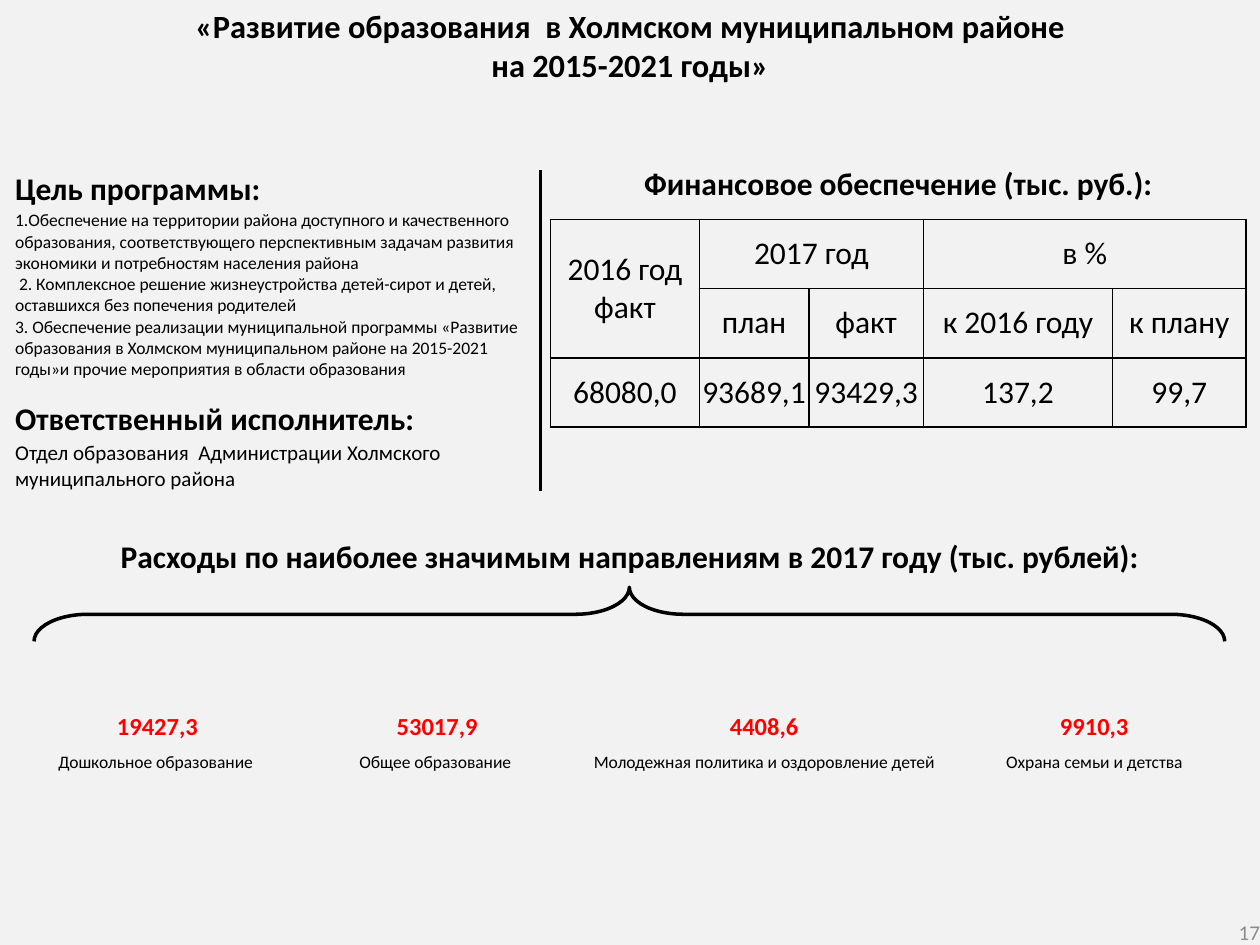
from lxml.etree import SubElement
from pptx import Presentation
from pptx.dml.color import RGBColor
from pptx.enum.shapes import MSO_SHAPE as Shape
from pptx.enum.text import MSO_ANCHOR as Anchor, PP_ALIGN as Align
from pptx.oxml.ns import qn
from pptx.util import Inches, Pt

COLORS = {"background": "F2F2F2", "text": "000000", "amount": "FF0000", "number": "8C8C8C"}
FONT = "Calibri"
PLAIN_TABLE = "{2D5ABB26-0587-4C30-8999-92F81FD0307C}"
SIDES = ("L", "R", "T", "B")


def rgb(name):
    return RGBColor.from_string(COLORS[name])


def write(frame, lines, size, bold=False, color="text", align=Align.CENTER):
    runs = []
    for index, line in enumerate(lines):
        paragraph = frame.paragraphs[0] if index == 0 else frame.add_paragraph()
        paragraph.alignment = align
        run = paragraph.add_run()
        run.text = line
        run.font.name = FONT
        run.font.size = Pt(size)
        run.font.bold = bold
        run.font.color.rgb = rgb(color)
        runs.append(run)
    return runs


def add_text_box(slide, box, anchor=Anchor.MIDDLE):
    shape = slide.shapes.add_textbox(*map(Inches, box))
    frame = shape.text_frame
    frame.word_wrap = True
    frame.vertical_anchor = anchor
    return frame


def add_plain_table(slide, left, top, widths, heights):
    box = map(Inches, (left, top, sum(widths), sum(heights)))
    table = slide.shapes.add_table(len(heights), len(widths), *box).table
    table.first_row = table.horz_banding = False
    table._tbl.tblPr.find(qn("a:tableStyleId")).text = PLAIN_TABLE
    for column, width in zip(table.columns, widths):
        column.width = Inches(width)
    for row, height in zip(table.rows, heights):
        row.height = Inches(height)
    return table


def format_cell(cell, margin, anchor=Anchor.MIDDLE, borders="", weight=1):
    cell.margin_left = cell.margin_right = Inches(margin)
    cell.margin_top = cell.margin_bottom = Inches(margin)
    cell.vertical_anchor = anchor
    properties = cell._tc.get_or_add_tcPr()
    for side in SIDES:
        if side in borders:
            line = SubElement(properties, qn(f"a:ln{side}"), w=str(Pt(weight)))
            fill = SubElement(line, qn("a:solidFill"))
            SubElement(fill, qn("a:srgbClr"), val=COLORS["text"])
        else:
            line = SubElement(properties, qn(f"a:ln{side}"), w="0")
            SubElement(line, qn("a:noFill"))
    cell.fill.background()


def add_title(slide, box):
    frame = add_text_box(slide, box, Anchor.TOP)
    lines = ["«Развитие образования  в Холмском муниципальном районе", "на 2015-2021 годы»"]
    for run in write(frame, lines, 18.5, True):
        properties = run.font._element
        effects = SubElement(properties, qn("a:effectLst"))
        properties.find(qn("a:solidFill")).addnext(effects)
        shadow = SubElement(effects, qn("a:outerShdw"), blurRad=str(Pt(3)),
                            dist=str(Pt(3)), dir="2700000", algn="tl")
        color = SubElement(shadow, qn("a:srgbClr"), val=COLORS["text"])
        SubElement(color, qn("a:alpha"), val="43000")


def add_programme(slide, left, top, width):
    sections = [
        (0.32, 18, True, ["Цель программы:"]),
        (1.51, 10, False, [
            "1.Обеспечение на территории района доступного и качественного образования, "
            "соответствующего перспективным задачам развития экономики и потребностям населения района",
            " 2. Комплексное решение жизнеустройства детей-сирот и детей, "
            "оставшихся без попечения родителей",
            "3. Обеспечение реализации муниципальной программы «Развитие образования в Холмском "
            "муниципальном районе на 2015-2021 годы»и прочие мероприятия в области образования",
        ]),
        (0.32, 18, True, ["Ответственный исполнитель:"]),
        (0.39, 12, False, ["Отдел образования  Администрации Холмского муниципального района"]),
    ]
    table = add_plain_table(slide, left, top, [width], [section[0] for section in sections])
    for row, (_, size, bold, lines) in enumerate(sections):
        cell = table.cell(row, 0)
        format_cell(cell, 0, Anchor.TOP, "R", 2.25)
        write(cell.text_frame, lines, size, bold, align=Align.LEFT)


def add_funding(slide, left, top):
    rows = [
        ["Финансовое обеспечение (тыс. руб.):", "", "", "", ""],
        ["2016 год факт", "2017 год", "", "в %", ""],
        ["", "план", "факт", "к 2016 году", "к плану"],
        ["68080,0", "93689,1", "93429,3", "137,2", "99,7"],
    ]
    table = add_plain_table(slide, left, top, [1.18, 0.87, 0.91, 1.5, 1.06], [0.55] * len(rows))
    for first, last in [((0, 0), (0, 4)), ((1, 0), (2, 0)), ((1, 1), (1, 2)), ((1, 3), (1, 4))]:
        table.cell(*first).merge(table.cell(*last))
    for row, texts in enumerate(rows):
        for column, text in enumerate(texts):
            cell = table.cell(row, column)
            format_cell(cell, 0.01 if row == 3 else 0.04, borders="LRTB" if row else "B")
            if text:
                write(cell.text_frame, [text], 18, row == 0)


def add_brace(slide, left, top, width, height):
    box = (left + (width - height) / 2, top + (height - width) / 2, height, width)
    brace = slide.shapes.add_shape(Shape.RIGHT_BRACE, *map(Inches, box))
    brace.rotation = 270
    brace.adjustments[0] = 0.997
    brace.adjustments[1] = 0.5
    brace.shadow.inherit = False
    brace.fill.background()
    brace.line.color.rgb = rgb("text")
    brace.line.width = Pt(2)


def add_expenses(slide, left, top):
    expenses = [
        (2.16, "19427,3", "Дошкольное образование "),
        (2.28, "53017,9", "Общее образование "),
        (2.91, "4408,6", "Молодежная политика и оздоровление детей"),
        (2.33, "9910,3", "Охрана семьи и детства"),
    ]
    table = add_plain_table(slide, left, top, [expense[0] for expense in expenses], [0.78, 1.57])
    for column, (_, amount, purpose) in enumerate(expenses):
        amount_cell, purpose_cell = table.cell(0, column), table.cell(1, column)
        format_cell(amount_cell, 0.04, Anchor.BOTTOM)
        write(amount_cell.text_frame, [amount], 14, True, "amount")
        format_cell(purpose_cell, 0.04, Anchor.TOP)
        write(purpose_cell.text_frame, [purpose], 10)


def add_page_number(slide, box):
    frame = add_text_box(slide, box)
    frame.margin_left = frame.margin_right = frame.margin_top = frame.margin_bottom = 0
    write(frame, ["17"], 12, color="number", align=Align.RIGHT)


def main():
    presentation = Presentation()
    presentation.slide_width, presentation.slide_height = Inches(10), Inches(7.5)
    slide = presentation.slides.add_slide(presentation.slide_layouts[6])
    slide.background.fill.solid()
    slide.background.fill.fore_color.rgb = rgb("background")
    add_title(slide, (0, 0, 10, 0.71))
    heading = add_text_box(slide, (0, 4.18, 10, 0.47))
    write(heading, ["Расходы по наиболее значимым направлениям в 2017 году (тыс. рублей):"], 18, True)
    add_funding(slide, 4.37, 1.19)
    add_brace(slide, 0.27, 4.66, 9.45, 0.43)
    add_expenses(slide, 0.17, 5.15)
    add_programme(slide, 0.12, 1.35, 4.17)
    add_page_number(slide, (7.67, 7.29, 2.33, 0.21))
    presentation.save("out.pptx")


if __name__ == "__main__":
    main()
